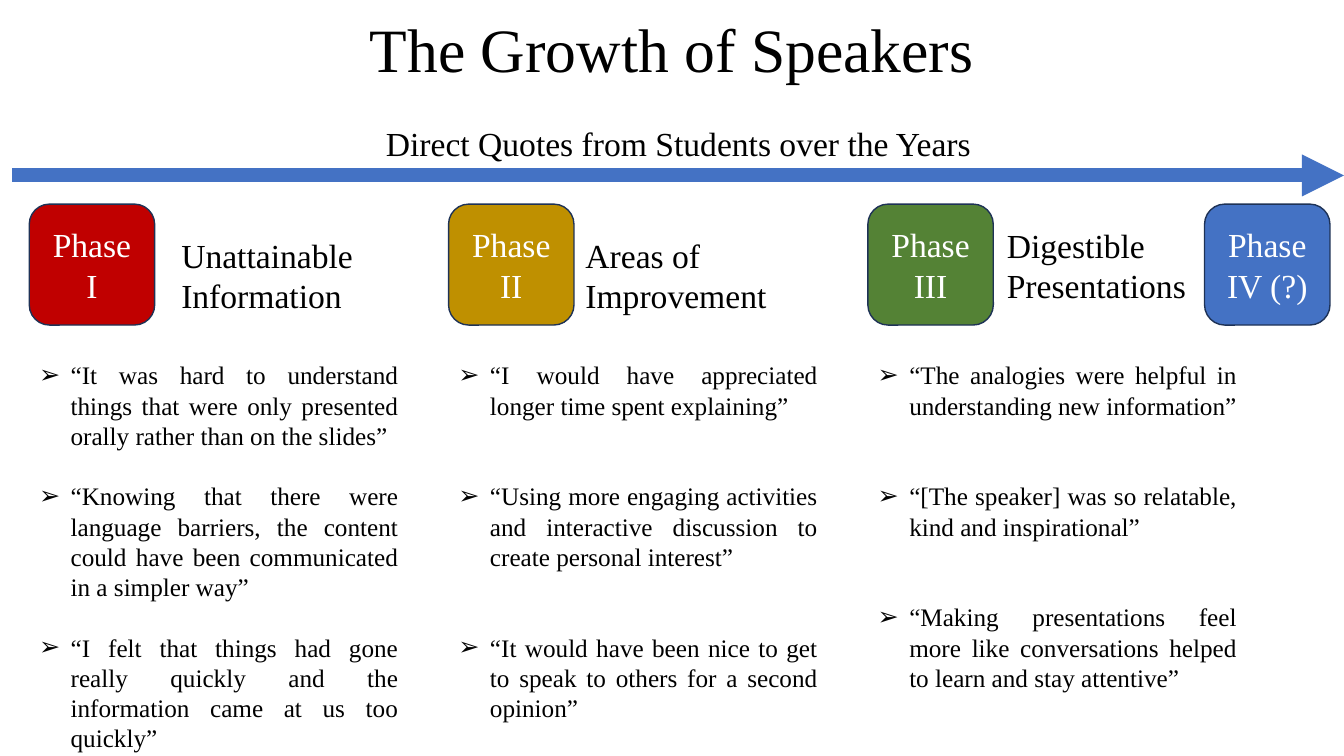
from lxml.etree import SubElement as Sub
from pptx import Presentation
from pptx.dml.color import RGBColor as Rgb
from pptx.enum.shapes import MSO_CONNECTOR as Conn, MSO_SHAPE as Shape
from pptx.enum.text import MSO_ANCHOR as Anchor, PP_ALIGN as Align
from pptx.oxml.ns import qn
from pptx.util import Pt

TITLE = "The Growth of Speakers"
LEAD = "Direct Quotes from Students over the Years"
PHASES = [
    ("Phase I", "red"),
    ("Phase II", "gold"),
    ("Phase III", "green"),
    ("Phase IV (?)", "blue"),
]
HEADS = [
    ("Unattainable Information", 122.4, 164.2),
    ("Areas of Improvement", 411.1, 164.2),
    ("Digestible Presentations", 712.1, 157),
]
QUOTES = [
    (1, 465, [
        "“It was hard to understand things that were only presented orally rather than on the slides”",
        "“Knowing that there were language barriers, the content could have been communicated in a simpler way”",
        "“I felt that things had gone really quickly and the information came at us too quickly”",
    ]),
    (2, 443.5, [
        "“I would have appreciated longer time spent explaining”",
        "“Using more engaging activities and interactive discussion to create personal interest”",
        "“It would have been nice to get to speak to others for a second opinion”",
    ]),
    (2, 356.4, [
        "“The analogies were helpful in understanding new information”",
        "“[The speaker] was so relatable, kind and inspirational”",
        "“Making presentations feel more like conversations helped to learn and stay attentive”",
    ]),
]
THEME = {
    "font": "Times New Roman",
    "title": 44, "head": 24, "body": 18,
    "black": "000000", "white": "FFFFFF", "edge": "1E3256",
    "red": "C00000", "gold": "BF9000", "green": "548235", "blue": "4472C4",
}
WIDTH, HEIGHT = 960, 540
LEFT, STEP, LAST = 20.9, 299.5, 860.4
CARD_TOP, CARD_W, CARD_H = 145.8, 89.6, 86.4
QUOTE_TOP, QUOTE_W = 253.4, 270.7
LINE, INDENT = 21.6, 22.5
ARROW_Y = 125.3


def hue(name):
    return Rgb.from_string(THEME[name])


def style(par, size, color="black", align=Align.LEFT, lines=None):
    par.alignment = align
    par.line_spacing = lines
    for run in par.runs:
        run.font.name = THEME["font"]
        run.font.size = Pt(THEME[size])
        run.font.color.rgb = hue(color)


def add_box(slide, x, y, w, h, anchor=Anchor.TOP):
    frame = slide.shapes.add_textbox(Pt(x), Pt(y), Pt(w), Pt(h)).text_frame
    frame.word_wrap = True
    frame.vertical_anchor = anchor
    return frame


def add_line(slide, text, size, x, y, w, h):
    frame = add_box(slide, x, y, w, h, Anchor.MIDDLE)
    frame.text = text
    style(frame.paragraphs[0], size, align=Align.CENTER, lines=0.9)


def add_arrow(slide):
    arrow = slide.shapes.add_connector(
        Conn.STRAIGHT, Pt(8.6), Pt(ARROW_Y), Pt(WIDTH), Pt(ARROW_Y))
    arrow.line.color.rgb = hue("blue")
    arrow.line.width = Pt(10)
    Sub(arrow.line._get_or_add_ln(), qn("a:tailEnd"), type="triangle")
    Sub(arrow._element.spPr, qn("a:effectLst"))


def add_card(slide, text, color, x):
    card = slide.shapes.add_shape(
        Shape.ROUNDED_RECTANGLE, Pt(x), Pt(CARD_TOP), Pt(CARD_W), Pt(CARD_H))
    card.shadow.inherit = False
    card.fill.solid()
    card.fill.fore_color.rgb = hue(color)
    card.line.color.rgb = hue("edge")
    card.line.width = Pt(1)
    frame = card.text_frame
    frame.word_wrap = True
    frame.vertical_anchor = Anchor.MIDDLE
    frame.text = text
    style(frame.paragraphs[0], "head", "white", Align.CENTER)


def add_quotes(slide, blanks, height, quotes, x):
    frame = add_box(slide, x, QUOTE_TOP, QUOTE_W, height)
    frame.text = "\n".join(quotes)
    for i, par in enumerate(frame.paragraphs):
        style(par, "body", align=Align.JUSTIFY)
        par.space_before = Pt(blanks * LINE if i else 0)
        props = par._p.get_or_add_pPr()
        props.set("marL", str(Pt(INDENT)))
        props.set("indent", str(-Pt(INDENT)))
        Sub(props, qn("a:buFont"), typeface="Arial")
        Sub(props, qn("a:buChar"), char="➢")


def main():
    deck = Presentation()
    deck.slide_width, deck.slide_height = Pt(WIDTH), Pt(HEIGHT)
    slide = deck.slides.add_slide(deck.slide_layouts[6])
    add_line(slide, TITLE, "title", 66, -14.4, 828, 104.4)
    add_arrow(slide)
    cols = [LEFT + i * STEP for i in range(3)]
    for (text, color), x in zip(PHASES, cols + [LAST]):
        add_card(slide, text, color, x)
    for (blanks, height, quotes), x in zip(QUOTES, cols):
        add_quotes(slide, blanks, height, quotes, x)
    add_line(slide, LEAD, "head", 13.7, 51.8, 941.8, 104.4)
    for i, (text, x, w) in enumerate(HEADS):
        frame = add_box(slide, x, 157 if i == 2 else 164.2, 149.8, 65.5)
        frame.text = text
        style(frame.paragraphs[0], "head")
    deck.save("out.pptx")


if __name__ == "__main__":
    main()
